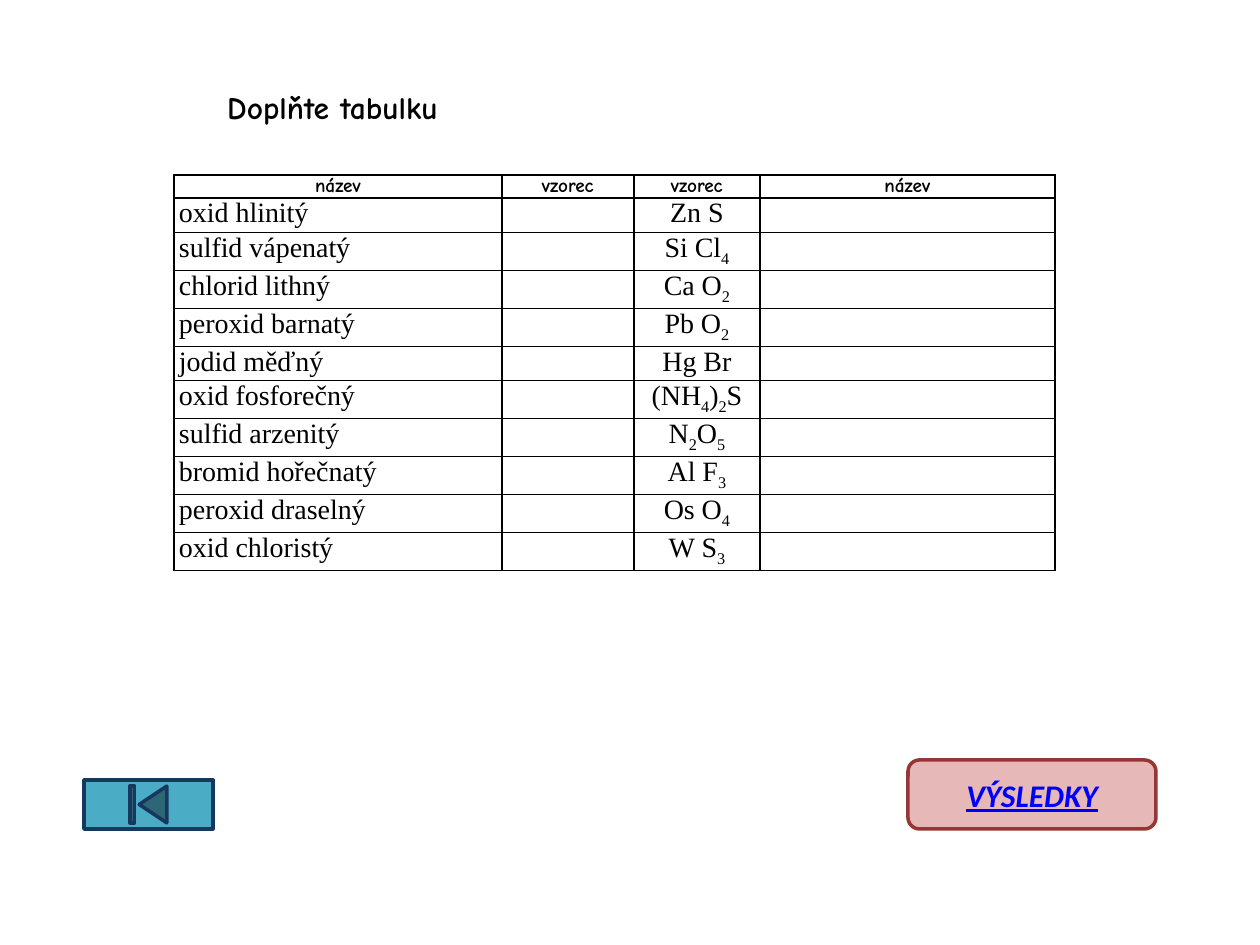
from itertools import groupby

from lxml.etree import SubElement
from pptx import Presentation
from pptx.dml.color import RGBColor
from pptx.enum.shapes import MSO_SHAPE
from pptx.enum.text import MSO_ANCHOR, PP_ALIGN
from pptx.oxml.ns import qn
from pptx.util import Emu, Pt

SCALE = 914400 // 126
BLACK = "000000"
HEADS = ["název", "vzorec", "vzorec", "název"]
ROWS = [
    ("oxid hlinitý", "Zn S"),
    ("sulfid vápenatý", "Si Cl4"),
    ("chlorid lithný", "Ca O2"),
    ("peroxid barnatý", "Pb O2"),
    ("jodid měďný", "Hg Br"),
    ("oxid fosforečný", "(NH4)2S"),
    ("sulfid arzenitý", "N2O5"),
    ("bromid hořečnatý", "Al F3"),
    ("peroxid draselný", "Os O4"),
    ("oxid chloristý", "W S3"),
]
WIDTHS = [328, 132, 126, 295]
HEAD_H, PLAIN_H, SUB_H = 23, 33, 38


def px(n):
    return Emu(n * SCALE)


def color(code):
    return RGBColor.from_string(code)


def style(para, size, face, code=BLACK, bold=False):
    for run in para.runs:
        font = run.font
        font.size, font.name, font.bold = Pt(size), face, bold
        font.color.rgb = color(code)


def write(para, text):
    """Write a formula, with its digits as subscripts."""
    for low, part in groupby(text, str.isdigit):
        run = para.add_run()
        run.text = "".join(part)
        if low:
            run._r.get_or_add_rPr().set("baseline", "-25000")


def border(cell):
    props = cell._tc.get_or_add_tcPr()
    for side in ("a:lnL", "a:lnR", "a:lnT", "a:lnB"):
        line = SubElement(props, qn(side), w=str(Pt(1)))
        fill = SubElement(line, qn("a:solidFill"))
        SubElement(fill, qn("a:srgbClr"), val=BLACK)


def fill_cell(cell, text, size, face, bold, center):
    border(cell)
    cell.fill.background()
    cell.margin_left = cell.margin_right = px(5)
    cell.margin_top = cell.margin_bottom = 0
    para = cell.text_frame.paragraphs[0]
    para.alignment = PP_ALIGN.CENTER if center else PP_ALIGN.LEFT
    write(para, text)
    style(para, size, face, bold=bold)
    if not text:
        # An empty cell keeps the row low through its end mark
        SubElement(para._p, qn("a:endParaRPr"), sz=str(size * 100))


def add_grid(slide):
    heights = [HEAD_H] + [
        SUB_H if any(map(str.isdigit, sign)) else PLAIN_H for _, sign in ROWS
    ]
    frame = slide.shapes.add_table(
        len(heights), len(WIDTHS), px(174), px(175),
        px(sum(WIDTHS)), px(sum(heights)))
    table = frame.table
    table.first_row = table.horz_banding = False
    for col, width in zip(table.columns, WIDTHS):
        col.width = px(width)
    for row, height in zip(table.rows, heights):
        row.height = px(height)

    for c, head in enumerate(HEADS):
        fill_cell(table.cell(0, c), head, 11, "Comic Neue", True, True)
    for r, (name, sign) in enumerate(ROWS, 1):
        for c, text in enumerate((name, "", sign, "")):
            fill_cell(table.cell(r, c), text, 16, "Times New Roman",
                      False, c == 2)


def add_title(slide, text):
    box = slide.shapes.add_textbox(px(184), px(18), px(297), px(146))
    frame = box.text_frame
    frame.word_wrap = True
    frame.vertical_anchor = MSO_ANCHOR.MIDDLE
    frame.margin_top, frame.margin_bottom = px(32), 0
    frame.text = text
    para = frame.paragraphs[0]
    para.alignment = PP_ALIGN.CENTER
    style(para, 18, "Comic Neue", bold=True)


def add_button(slide, kind, x, y, w, h, fill, line):
    shape = slide.shapes.add_shape(kind, px(x), px(y), px(w), px(h))
    shape.shadow.inherit = False
    shape.fill.solid()
    shape.fill.fore_color.rgb = color(fill)
    shape.line.color.rgb = color(line)
    shape.line.width = Pt(2)
    return shape


def add_label(shape, text):
    frame = shape.text_frame
    frame.text = text
    frame.vertical_anchor = MSO_ANCHOR.MIDDLE
    para = frame.paragraphs[0]
    para.alignment = PP_ALIGN.CENTER
    style(para, 18, "Calibri", "0000FF", True)
    font = para.runs[0].font
    font.italic = font.underline = True


def main():
    deck = Presentation()
    deck.slide_width, deck.slide_height = px(1260), px(945)
    slide = deck.slides.add_slide(deck.slide_layouts[6])

    # Exercise
    add_grid(slide)
    add_title(slide, "Doplňte tabulku")

    # Buttons
    add_button(slide, MSO_SHAPE.ACTION_BUTTON_BEGINNING,
               84, 780, 129, 49, "4BACC6", "17375E")
    result = add_button(slide, MSO_SHAPE.ROUNDED_RECTANGLE,
                        908, 760, 248, 69, "E6B9B8", "953735")
    add_label(result, "VÝSLEDKY")

    deck.save("out.pptx")


if __name__ == "__main__":
    main()
